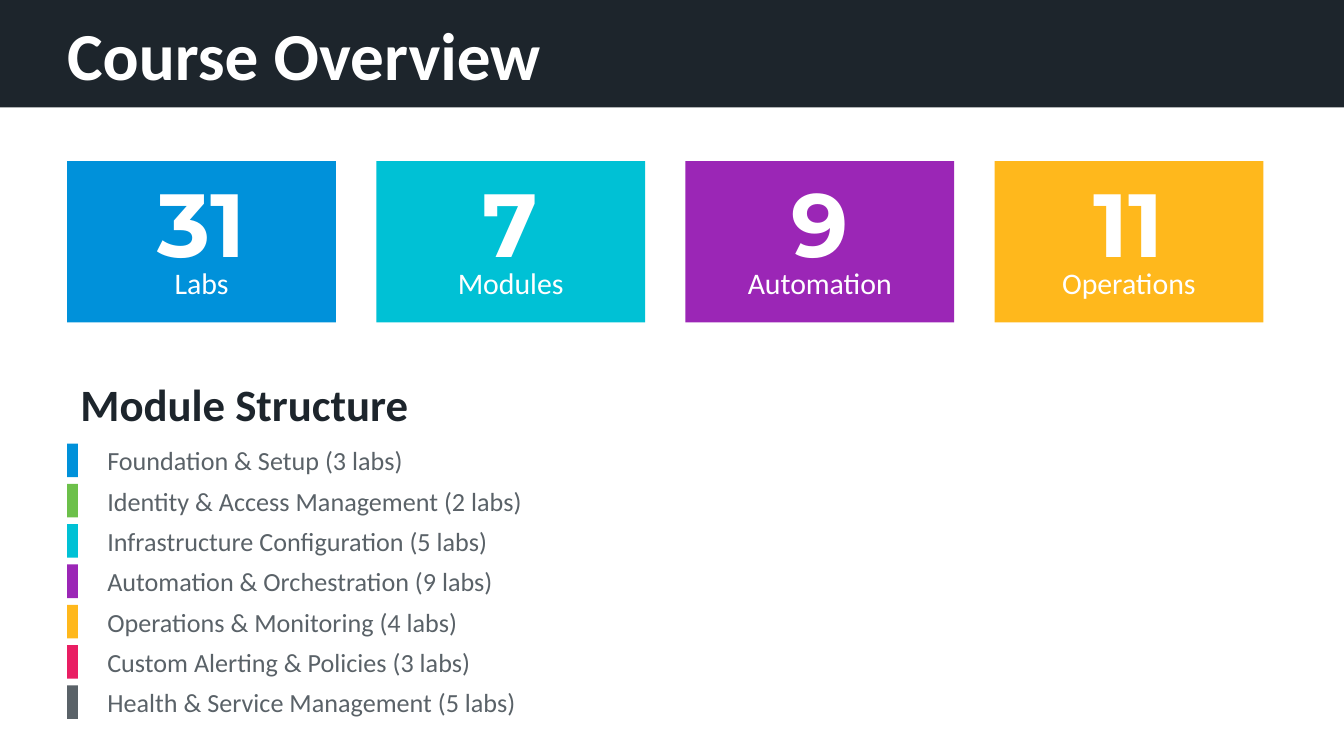
from pptx import Presentation
from pptx import util as u
from pptx.dml import color
from pptx.enum import shapes, text

HUES = {
    "ink": "1D252C", "white": "FFFFFF", "gray": "5A6268",
    "blue": "0091DA", "green": "6CC04A", "cyan": "00C1D5",
    "purple": "9B26B6", "amber": "FFB81C", "pink": "E91E63",
}
STATS = [
    ("31", "Labs", "blue"), ("7", "Modules", "cyan"),
    ("9", "Automation", "purple"), ("11", "Operations", "amber"),
]
MODULES = [
    ("Foundation & Setup (3 labs)", "blue"),
    ("Identity & Access Management (2 labs)", "green"),
    ("Infrastructure Configuration (5 labs)", "cyan"),
    ("Automation & Orchestration (9 labs)", "purple"),
    ("Operations & Monitoring (4 labs)", "amber"),
    ("Custom Alerting & Policies (3 labs)", "pink"),
    ("Health & Service Management (5 labs)", "gray"),
]


def inch(*box):
    """Turn numbers into lengths in inches."""
    return [u.Inches(n) for n in box]


def block(slide, box, hue):
    """Draw a plain filled rectangle."""
    rect = slide.shapes.add_shape(shapes.MSO_SHAPE.RECTANGLE, *inch(*box))
    rect.shadow.inherit = False
    rect.fill.solid()
    rect.fill.fore_color.rgb = color.RGBColor.from_string(HUES[hue])
    rect.line.fill.background()


def write(shape, words, size, hue, bold=False, face="Calibri", align="LEFT"):
    """Fill a shape with one formatted, vertically centred line."""
    frame = shape.text_frame
    frame.text = words
    frame.word_wrap = True
    frame.auto_size = text.MSO_AUTO_SIZE.NONE
    frame.vertical_anchor = text.MSO_ANCHOR.MIDDLE
    line = frame.paragraphs[0]
    line.alignment = text.PP_ALIGN[align]
    font = line.runs[0].font
    font.name, font.size, font.bold = face, u.Pt(size), bold
    font.color.rgb = color.RGBColor.from_string(HUES[hue])


def label(slide, box, *args, **style):
    """Add a text box holding one line."""
    write(slide.shapes.add_textbox(*inch(*box)), *args, **style)


def header(slide, x, y, w, h):
    """Draw the dark band with the slide title on top of it."""
    block(slide, (x, y, w, h), "ink")
    title = slide.shapes.title
    slide.shapes.element.append(title.element)
    title.left, title.top, title.width, title.height = inch(
        x + 0.5, y + 0.15, w - 1, 0.5)
    write(title, "Course Overview", 36, "white", bold=True)
    frame = title.text_frame
    frame.margin_left = frame.margin_right = 0
    frame.margin_top = frame.margin_bottom = 0


def cards(slide, x, y, w, h, gap=0.3):
    """Draw a row of equal number cards."""
    wide = (w - gap * (len(STATS) - 1)) / len(STATS)
    for i, (count, name, hue) in enumerate(STATS):
        left = x + i * (wide + gap)
        block(slide, (left, y, wide, h), hue)
        label(slide, (left, y + 0.2, wide, 0.5), count, 48, "white",
              bold=True, face="Montserrat", align="CENTER")
        label(slide, (left, y + 0.75, wide, 0.3), name, 16, "white",
              align="CENTER")


def outline(slide, x, y, w, step=0.3):
    """Draw the heading and the colour-keyed list of modules."""
    label(slide, (x, y, w, 0.4), "Module Structure", 24, "ink", bold=True)
    for i, (name, hue) in enumerate(MODULES):
        top = y + 0.5 + i * step
        block(slide, (x, top, 0.08, 0.25), hue)
        label(slide, (x + 0.2, top, w - 0.2, 0.25), name, 14, "gray")


def main():
    """Build the deck and save it."""
    deck = Presentation()
    deck.slide_width, deck.slide_height = inch(10, 10 * 9 / 16)
    slide = deck.slides.add_slide(deck.slide_layouts[5])
    header(slide, 0, 0, 10, 0.8)
    cards(slide, 0.5, 1.2, 8.9, 1.2)
    outline(slide, 0.5, 2.8, 9)
    deck.save("out.pptx")


if __name__ == "__main__":
    main()
